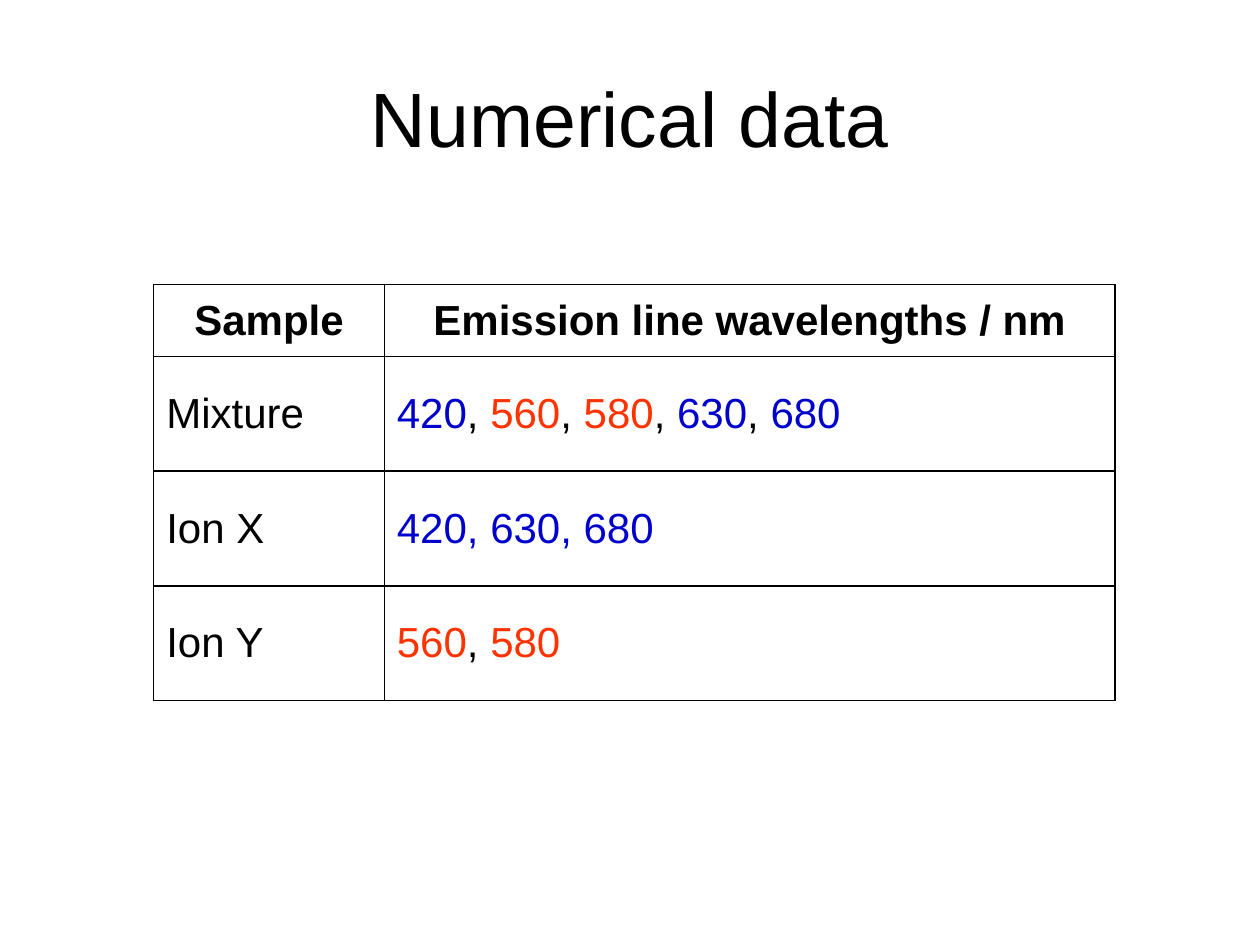
from lxml import etree
from pptx import Presentation
from pptx.dml.color import RGBColor
from pptx.enum.text import MSO_ANCHOR, PP_ALIGN
from pptx.oxml.ns import qn
from pptx.util import Inches, Pt

MIDDLE = MSO_ANCHOR.MIDDLE
CENTER = PP_ALIGN.CENTER
LEFT = PP_ALIGN.LEFT

COLORS = {"black": "000000", "blue": "0000CC", "red": "FF3300"}


class SlideBuilder:
    """Holds the text style and the slide being built."""

    font_name = "Arial"
    title_size = 44
    table_size = 24
    border_width = 1

    def __init__(self, slide):
        self.slide = slide

    def add_spans(self, frame, spans, size, align=LEFT, bold=False):
        para = frame.paragraphs[0]
        para.alignment = align
        para.font.name = self.font_name
        para.font.size = Pt(size)
        para.font.bold = bold
        for text, color in spans:
            span = para.add_run()
            span.text = text
            span.font.color.rgb = RGBColor.from_string(COLORS[color])

    def title(self, text, left, top, width, height):
        box = self.slide.shapes.add_textbox(
            Inches(left), Inches(top), Inches(width), Inches(height))
        frame = box.text_frame
        frame.word_wrap = True
        frame.vertical_anchor = MIDDLE
        self.add_spans(frame, [(text, "black")], self.title_size, CENTER)

    def border(self, cell):
        properties = cell._tc.get_or_add_tcPr()
        for index, side in enumerate(("lnL", "lnR", "lnT", "lnB")):
            line = etree.Element(qn(f"a:{side}"), w=str(Pt(self.border_width)))
            fill = etree.SubElement(line, qn("a:solidFill"))
            etree.SubElement(fill, qn("a:srgbClr"), val=COLORS["black"])
            properties.insert(index, line)

    def table(self, rows, left, top, widths, heights):
        table = self.slide.shapes.add_table(
            len(rows), len(widths), Inches(left), Inches(top),
            Inches(sum(widths)), Inches(sum(heights))).table
        table.horz_banding = False
        for column, width in zip(table.columns, widths):
            column.width = Inches(width)
        for row_index, (row, height) in enumerate(zip(rows, heights)):
            table.rows[row_index].height = Inches(height)
            header = row_index == 0
            for column_index, spans in enumerate(row):
                cell = table.cell(row_index, column_index)
                cell.vertical_anchor = MIDDLE
                cell.fill.background()
                self.border(cell)
                self.add_spans(cell.text_frame, spans, self.table_size,
                               CENTER if header else LEFT, header)


def comma_list(*values):
    spans = []
    for value in values:
        if spans:
            spans.append((", ", "black"))
        spans.append(value)
    return spans


def main():
    deck = Presentation()
    deck.slide_width = Inches(10)
    deck.slide_height = Inches(7.5)
    page = SlideBuilder(deck.slides.add_slide(deck.slide_layouts[6]))

    page.title("Numerical data", 0.5, 0.3, 9, 1.25)

    line_560, line_580 = ("560", "red"), ("580", "red")
    mixture = comma_list(
        ("420", "blue"), line_560, line_580, ("630", "blue"), ("680", "blue"))
    rows = [
        ([("Sample", "black")], [("Emission line wavelengths / nm", "black")]),
        ([("Mixture", "black")], mixture),
        ([("Ion X", "black")], [("420, 630, 680", "blue")]),
        ([("Ion Y", "black")], comma_list(line_560, line_580)),
    ]
    page.table(rows, 1.22, 2.26, [1.83, 5.8], [0.57] + [0.91] * 3)

    deck.save("out.pptx")


if __name__ == "__main__":
    main()
